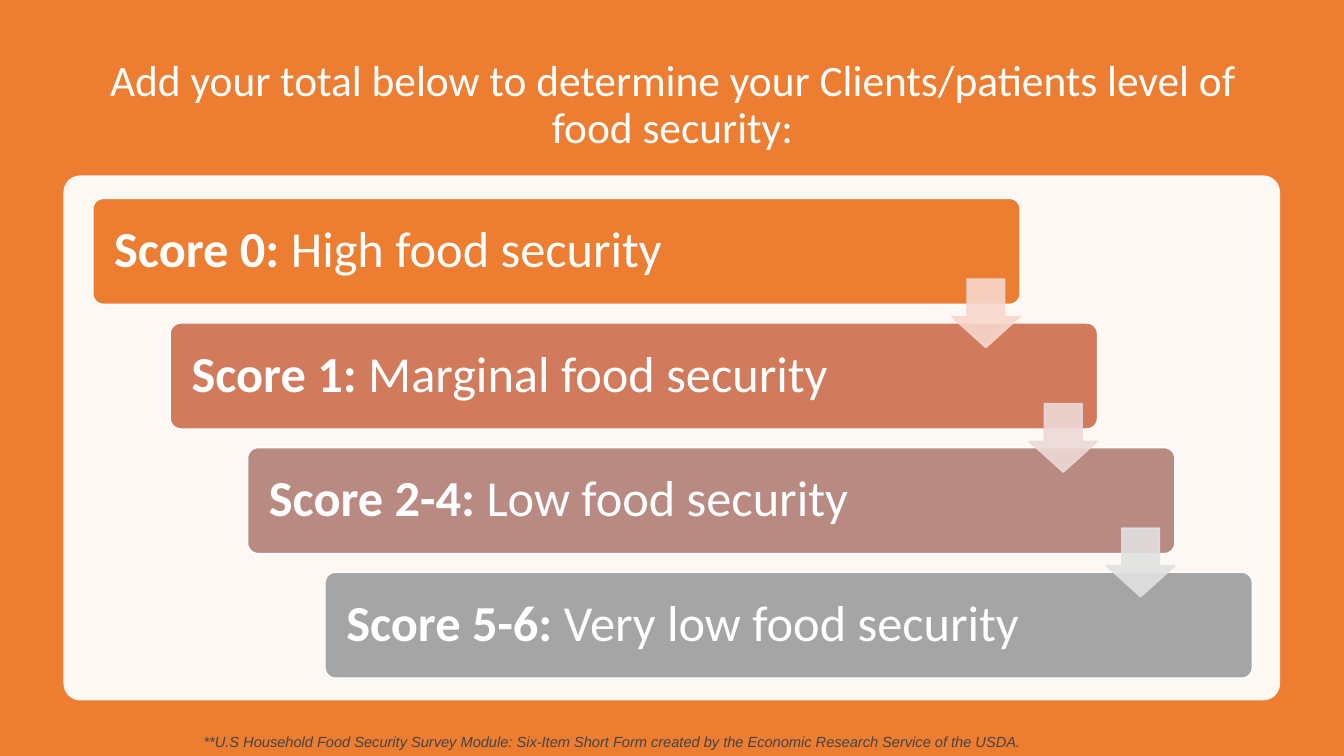
import pptx
import pptx.util
import pptx.dml.color
import pptx.enum.shapes
import pptx.enum.text
import pptx.oxml
import pptx.oxml.ns

Cm = pptx.util.Cm
Pt = pptx.util.Pt
SHAPE = pptx.enum.shapes.MSO_SHAPE
ANCHOR = pptx.enum.text.MSO_ANCHOR
ALIGN = pptx.enum.text.PP_ALIGN

TITLE = "Add your total below to determine your Clients/patients level of food security:"
FOOTNOTE = (
    "**U.S Household Food Security Survey Module: Six-Item Short Form "
    "created by the Economic Research Service of the USDA."
)
LEVELS = [
    ("Score 0:", " High food security", "orange"),
    ("Score 1:", " Marginal food security", "terracotta"),
    ("Score 2-4:", " Low food security", "rose"),
    ("Score 5-6:", " Very low food security", "gray"),
]
ARROW_COLORS = ["pale_orange", "pale_rose", "pale_gray"]
COLORS = {
    "orange": "ED7D31",
    "terracotta": "D17B5C",
    "rose": "B98A82",
    "gray": "A5A5A5",
    "pale_orange": "F8D7CE",
    "pale_rose": "EDD9D7",
    "pale_gray": "E1E1E1",
    "white": "FFFFFF",
    "dark": "444444",
}

SLIDE_WIDTH, SLIDE_HEIGHT = 33.87, 19.05
BAR_LEFT, BAR_TOP = 2.34, 5.0
BAR_WIDTH, BAR_HEIGHT = 23.37, 2.67
STEP_X, STEP_Y = 1.95, 3.14
ARROW_SIZE, ARROW_DROP = 1.73, 2.03


def rgb(name):
    return pptx.dml.color.RGBColor.from_string(COLORS[name])


def set_opacity(fill_parent, percent):
    color = fill_parent.find(".//" + pptx.oxml.ns.qn("a:srgbClr"))
    alpha = pptx.oxml.parse_xml(
        f'<a:alpha {pptx.oxml.ns.nsdecls("a")} val="{percent * 1000}"/>'
    )
    color.append(alpha)


def add_filled(slide, kind, left, top, width, height, color, line=None, adjustments=()):
    shape = slide.shapes.add_shape(kind, Cm(left), Cm(top), Cm(width), Cm(height))
    shape.shadow.inherit = False
    shape.fill.solid()
    shape.fill.fore_color.rgb = rgb(color)
    if line:
        shape.line.color.rgb = rgb(line)
        shape.line.width = Pt(1)
    else:
        shape.line.fill.background()
    for index, value in enumerate(adjustments):
        shape.adjustments[index] = value
    return shape


def style_font(paragraph, name, size, color):
    paragraph.font.name = name
    paragraph.font.size = Pt(size)
    paragraph.font.color.rgb = rgb(color)


def add_title(slide):
    title = slide.shapes.title
    title.left, title.top, title.width, title.height = Cm(2.34), Cm(1.27), Cm(29.21), Cm(2.79)
    frame = title.text_frame
    frame.text = TITLE
    frame.word_wrap = True
    frame.auto_size = pptx.enum.text.MSO_AUTO_SIZE.NONE
    frame.vertical_anchor = ANCHOR.MIDDLE
    paragraph = frame.paragraphs[0]
    paragraph.alignment = ALIGN.CENTER
    paragraph.line_spacing = 0.9
    paragraph.space_after = Pt(6)
    style_font(paragraph, "Calibri", 31, "white")


def add_footnote(slide):
    footnote = slide.shapes.add_textbox(Cm(4.88), Cm(18.34), Cm(27.86), Cm(0.71))
    footnote.text_frame.word_wrap = True
    paragraph = footnote.text_frame.paragraphs[0]
    paragraph.text = FOOTNOTE
    paragraph.space_after = Pt(6)
    paragraph.font.italic = True
    style_font(paragraph, "Arial", 10.5, "dark")


def add_level(slide, position, score, meaning, color):
    bar = add_filled(
        slide, SHAPE.ROUNDED_RECTANGLE,
        BAR_LEFT + position * STEP_X, BAR_TOP + position * STEP_Y,
        BAR_WIDTH, BAR_HEIGHT, color, "white", [0.1],
    )
    frame = bar.text_frame
    frame.word_wrap = True
    frame.vertical_anchor = ANCHOR.MIDDLE
    frame.margin_left = frame.margin_right = Cm(0.46)
    paragraph = frame.paragraphs[0]
    paragraph.alignment = ALIGN.LEFT
    paragraph.line_spacing = 0.9
    style_font(paragraph, "Calibri", 36, "white")
    for text, bold in ((score, True), (meaning, False)):
        run = paragraph.add_run()
        run.text = text
        run.font.bold = bold


def add_arrow(slide, position, color):
    arrow = add_filled(
        slide, SHAPE.DOWN_ARROW,
        BAR_LEFT + position * STEP_X + BAR_WIDTH - ARROW_SIZE,
        BAR_TOP + position * STEP_Y + ARROW_DROP,
        ARROW_SIZE, ARROW_SIZE, color, color, [0.55, 0.45],
    )
    properties = arrow.element.spPr
    set_opacity(properties.find(pptx.oxml.ns.qn("a:solidFill")), 90)
    set_opacity(properties.find(pptx.oxml.ns.qn("a:ln")), 90)


def main():
    presentation = pptx.Presentation()
    presentation.slide_width = Cm(SLIDE_WIDTH)
    presentation.slide_height = Cm(SLIDE_HEIGHT)
    slide = presentation.slides.add_slide(presentation.slide_layouts[5])

    backdrop = add_filled(slide, SHAPE.RECTANGLE, 0, 0, SLIDE_WIDTH, SLIDE_HEIGHT, "orange")
    slide.shapes.title.element.addprevious(backdrop.element)
    add_title(slide)

    panel = add_filled(
        slide, SHAPE.ROUNDED_RECTANGLE, 1.6, 4.42, 30.66, 13.23, "white", adjustments=[0.032]
    )
    set_opacity(panel.element.spPr, 95)
    add_footnote(slide)

    for position, level in enumerate(LEVELS):
        add_level(slide, position, *level)
    for position, color in enumerate(ARROW_COLORS):
        add_arrow(slide, position, color)

    presentation.save("out.pptx")


if __name__ == "__main__":
    main()
